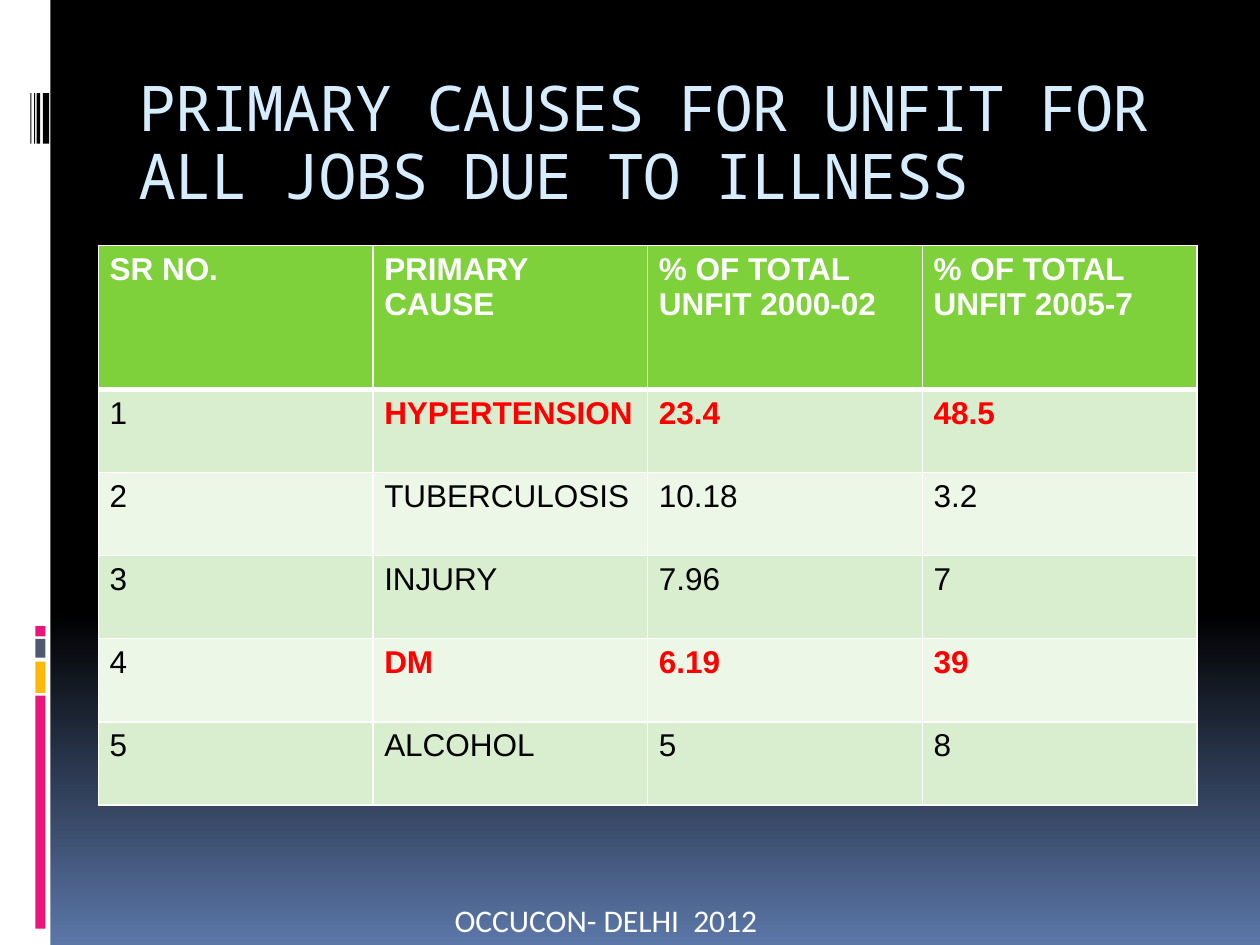
from dataclasses import dataclass

from lxml.etree import SubElement
from pptx import Presentation
from pptx.dml.color import RGBColor
from pptx.enum.shapes import MSO_SHAPE
from pptx.enum.text import MSO_ANCHOR, MSO_AUTO_SIZE, PP_ALIGN
from pptx.oxml import parse_xml
from pptx.oxml.ns import nsdecls, qn
from pptx.util import Inches, Pt


@dataclass(frozen=True)
class Theme:
    black: str = "000000"
    white: str = "FFFFFF"
    horizon: str = "5B77A8"
    pink: str = "EA157A"
    amber: str = "FEB80A"
    slate: str = "4E5B6F"
    title: str = "D6ECFF"
    header: str = "7FD13B"
    bands: tuple = ("D8EECE", "ECF7E8")
    alert: str = "FF0000"
    title_font: str = "Noto Sans Mono"
    table_font: str = "Arial"
    footer_font: str = "Calibri"
    title_size: int = 36
    body_size: int = 18
    rule: int = 1
    header_rule: int = 3


HEADINGS = ("SR NO.", "PRIMARY CAUSE", "% OF TOTAL UNFIT 2000-02", "% OF TOTAL UNFIT 2005-7")
CAUSES = (
    ("1", "HYPERTENSION", "23.4", "48.5"),
    ("2", "TUBERCULOSIS", "10.18", "3.2"),
    ("3", "INJURY", "7.96", "7"),
    ("4", "DM", "6.19", "39"),
    ("5", "ALCOHOL", "5", "8"),
)
HIGHLIGHTED = {"HYPERTENSION", "DM"}


class SlideBuilder:
    def __init__(self, page, theme):
        self.page = page
        self.theme = theme

    def background(self):
        fill = self.page.background.fill
        fill.gradient()
        fill.gradient_angle = 270
        colours = (self.theme.black, self.theme.horizon)
        for stop, position, colour in zip(fill.gradient_stops, (0.65, 1), colours):
            stop.position = position
            stop.color.rgb = RGBColor.from_string(colour)

    def bar(self, left, top, width, height, colour):
        shape = self.page.shapes.add_shape(
            MSO_SHAPE.RECTANGLE, Inches(left), Inches(top), Inches(width), Inches(height))
        shape.shadow.inherit = False
        shape.fill.solid()
        shape.fill.fore_color.rgb = RGBColor.from_string(colour)
        shape.line.fill.background()

    def style(self, paragraph, name, size, colour, bold=False):
        font = paragraph.font
        font.name, font.size, font.bold = name, Pt(size), bold
        font.color.rgb = RGBColor.from_string(colour)

    def text(self, left, top, width, height, words, name, size, colour):
        box = self.page.shapes.add_textbox(
            Inches(left), Inches(top), Inches(width), Inches(height))
        frame = box.text_frame
        frame.word_wrap = True
        frame.vertical_anchor = MSO_ANCHOR.TOP
        paragraph = frame.paragraphs[0]
        paragraph.text = words
        self.style(paragraph, name, size, colour)
        return frame

    def title(self, words):
        theme = self.theme
        frame = self.text(1, 0.56, 8.5, 1, words,
                          theme.title_font, theme.title_size, theme.title)
        paragraph = frame.paragraphs[0]
        paragraph.line_spacing = 0.9
        paragraph.runs[0].font._element.set("spc", "-100")

    def footer(self, words):
        theme = self.theme
        frame = self.text(3.43, 7.1, 2.76, 0.4, words,
                          theme.footer_font, theme.body_size, theme.white)
        frame.word_wrap = False
        frame.auto_size = MSO_AUTO_SIZE.SHAPE_TO_FIT_TEXT
        frame.paragraphs[0].alignment = PP_ALIGN.CENTER

    def borders(self, cell, top, bottom):
        """Draw the four edges, which must come before the fill in the cell properties."""
        properties = cell._tc.get_or_add_tcPr()
        edges = (("lnL", self.theme.rule), ("lnR", self.theme.rule),
                 ("lnT", top), ("lnB", bottom))
        for index, (edge, width) in enumerate(edges):
            line = parse_xml(f'<a:{edge} {nsdecls("a")} w="{Pt(width)}"/>')
            fill = SubElement(line, qn("a:solidFill"))
            SubElement(fill, qn("a:srgbClr"), val=self.theme.white)
            properties.insert(index, line)

    def cell(self, cell, words, fill, colour, bold, top, bottom):
        cell.text = words
        cell.margin_left = cell.margin_right = Inches(0.09)
        cell.margin_top = cell.margin_bottom = Inches(0.05)
        cell.fill.solid()
        cell.fill.fore_color.rgb = RGBColor.from_string(fill)
        self.style(cell.text_frame.paragraphs[0], self.theme.table_font,
                   self.theme.body_size, colour, bold)
        self.borders(cell, top, bottom)

    def table(self, headings, records):
        theme = self.theme
        table = self.page.shapes.add_table(
            len(records) + 1, len(headings),
            Inches(0.78), Inches(1.95), Inches(8.72), Inches(4.45)).table
        for row in table.rows:
            row.height = Inches(0.66)
        table.rows[0].height = Inches(1.14)
        for column, heading in enumerate(headings):
            self.cell(table.cell(0, column), heading, theme.header, theme.white, True,
                      theme.rule, theme.header_rule)
        for row, record in enumerate(records, 1):
            band = theme.bands[(row - 1) % 2]
            top = theme.header_rule if row == 1 else theme.rule
            for column, words in enumerate(record):
                alert = column > 0 and record[1] in HIGHLIGHTED
                self.cell(table.cell(row, column), words, band,
                          theme.alert if alert else theme.black, alert, top, theme.rule)


def main():
    deck = Presentation()
    deck.slide_width, deck.slide_height = Inches(10), Inches(7.5)
    theme = Theme()
    slide = SlideBuilder(deck.slides.add_slide(deck.slide_layouts[6]), theme)
    slide.background()
    slide.bar(0, 0, 0.4, 7.5, theme.white)
    for top, height, colour in ((5.52, 1.85, theme.pink), (5.25, 0.25, theme.amber),
                                (5.07, 0.15, theme.slate), (4.97, 0.08, theme.pink)):
        slide.bar(0.28, top, 0.08, height, colour)
    for left, width in ((0.34, 0.05), (0.29, 0.03), (0.27, 0.01), (0.24, 0.01)):
        slide.bar(left, 0.74, width, 0.4, theme.black)
    slide.title("PRIMARY CAUSES FOR UNFIT FOR ALL JOBS DUE TO ILLNESS")
    slide.table(HEADINGS, CAUSES)
    slide.footer("OCCUCON- DELHI  2012")
    deck.save("out.pptx")


if __name__ == "__main__":
    main()
